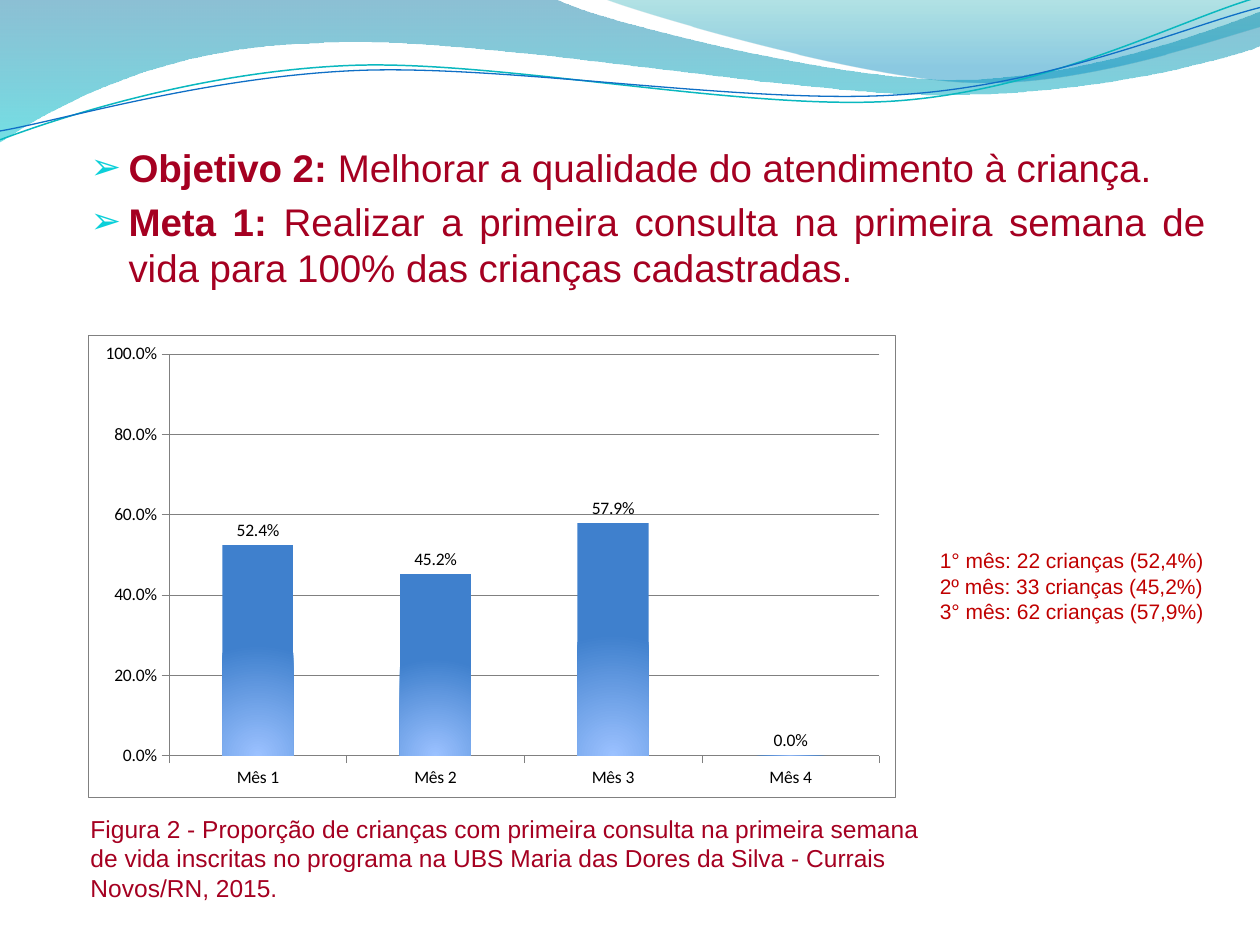
import math

from lxml import etree
from pptx import Presentation
from pptx.chart.data import CategoryChartData
from pptx.dml.color import RGBColor
from pptx.enum import chart as chart_enum, text as text_enum
from pptx.oxml import ns, parse_xml
from pptx.util import Inches, Pt

WINE = RGBColor(0xA5, 0x00, 0x21)
RED = RGBColor(0xC0, 0x00, 0x00)
TEAL = RGBColor(0x0A, 0xB8, 0xBF)
BLUE = RGBColor(0x0F, 0x6F, 0xC6)
GRAY = RGBColor(0x80, 0x80, 0x80)
BLACK = RGBColor(0, 0, 0)
BULLET_COLOR = "0BD0D9"

GOALS = [
    ("Objetivo 2: ", "Melhorar a qualidade do atendimento à criança."),
    ("Meta 1: ", "Realizar a primeira consulta na primeira semana de vida "
                 "para 100% das crianças cadastradas."),
]
CAPTION = ["Figura 2 - Proporção de crianças com primeira consulta na primeira semana "
           "de vida inscritas no programa na UBS Maria das Dores da Silva - "
           "Currais Novos/RN, 2015."]
COUNTS = ["1° mês: 22 crianças (52,4%)", "2º mês: 33 crianças (45,2%)",
          "3° mês: 62 crianças (57,9%) "]
MONTHS = ["Mês 1", "Mês 2", "Mês 3", "Mês 4"]
SHARES = [0.524, 0.452, 0.579, 0]

# Each path is a start point, then straight (1 point) or Bézier (3 points) steps, in inches.
# Gradient stops are position %, colour, opacity %.
WAVES = [
    ([[(0, 0)], [(4.4, -0.01)], [(4.76, 0.17), (6.64, 0.63), (7.58, 0.63)],
      [(8.53, 0.63), (9.58, 0.26), (10, 0.09)], [(10.01, 0.36)],
      [(9.83, 0.44), (8.7, 0.76), (7.46, 0.75)], [(6.22, 0.75), (3.82, 0.28), (2.57, 0.34)],
      [(1.29, 0.36), (0.46, 0.83), (-0.01, 1.13)], [(0, 0)]],
     [(0, "0074A1", 45), (100, "00C6CF", 55)]),
    ([[(4.79, -0.01)], [(5.09, 0.11), (6.82, 0.62), (7.69, 0.65)],
      [(8.56, 0.69), (9.61, 0.32), (10, 0.21)], [(10, 0)], [(4.79, -0.01)]],
     [(0, "00A1A9", 30), (80, "008BBF", 45)]),
]
RIBBONS = [
    ([[(0, 1.11)], [(0.48, 0.93), (1.58, 0.57), (2.77, 0.52)],
      [(3.95, 0.47), (5.93, 0.89), (7.13, 0.8)], [(8.33, 0.71), (9.38, 0.15), (9.98, -0.02)]],
     (4.99, 0.57), TEAL, 0.85),
    ([[(0, 1.04)], [(0.47, 0.96), (1.64, 0.61), (2.83, 0.56)],
      [(4.03, 0.51), (5.97, 0.84), (7.17, 0.75)], [(8.36, 0.67), (9.41, 0.21), (10, 0.06)]],
     (5, 0.59), BLUE, 0.75),
]
RIBBON_TILT = -2.7
LINEAR_DOWN = '<a:lin ang="5400000" scaled="0"/>'
RADIAL_BOTTOM = '<a:path path="circle"><a:fillToRect l="50000" t="100000" r="50000"/></a:path>'


def turn(path, center, degrees):
    cosine, sine = math.cos(math.radians(degrees)), math.sin(math.radians(degrees))
    return [[(center[0] + (x - center[0]) * cosine - (y - center[1]) * sine,
              center[1] + (x - center[0]) * sine + (y - center[1]) * cosine)
             for x, y in step] for step in path]


def add_curve(shapes, path, close):
    """Build a freeform through the end points, then bend its Bézier segments."""
    steps = [[(Inches(x), Inches(y)) for x, y in step] for step in path]
    builder = shapes.build_freeform(*steps[0][0])
    builder.add_line_segments([step[-1] for step in steps[1:]], close=close)
    shape = builder.convert_to_shape()
    shape.shadow.inherit = False
    segments = list(shape.element.iter(ns.qn("a:lnTo")))
    for segment, step in zip(segments, steps[1:]):
        if len(step) == 3:
            curve = etree.Element(ns.qn("a:cubicBezTo"))
            for x, y in step:
                etree.SubElement(curve, ns.qn("a:pt"),
                                 x=str(x - shape.left), y=str(y - shape.top))
            segment.getparent().replace(segment, curve)
    return shape


def set_gradient(fill, properties, stops, direction):
    fill.solid()
    stop_xml = "".join(
        f'<a:gs pos="{position * 1000}"><a:srgbClr val="{color}">'
        f'<a:alpha val="{opacity * 1000}"/></a:srgbClr></a:gs>'
        for position, color, opacity in stops)
    solid = properties.find(ns.qn("a:solidFill"))
    properties.replace(solid, parse_xml(
        f'<a:gradFill {ns.nsdecls("a")} rotWithShape="1"><a:gsLst>{stop_xml}</a:gsLst>'
        f'{direction}</a:gradFill>'))


def add_run(paragraph, text, size, color, bold=False):
    run = paragraph.add_run()
    run.text = text
    font = run.font
    font.name, font.size, font.bold = "Arial", Pt(size), bold
    font.color.rgb = color


def add_text(slide, box, lines, size, color, indent=None):
    frame = slide.shapes.add_textbox(*map(Inches, box)).text_frame
    frame.word_wrap = True
    frame.auto_size = text_enum.MSO_AUTO_SIZE.SHAPE_TO_FIT_TEXT
    for index, line in enumerate(lines):
        paragraph = frame.add_paragraph() if index else frame.paragraphs[0]
        if indent:
            paragraph.alignment = text_enum.PP_ALIGN.JUSTIFY
            paragraph._p.get_or_add_pPr().set("marL", str(Inches(indent)))
        add_run(paragraph, line, size, color)


def fill_goals(body):
    body.left, body.top, body.width, body.height = map(Inches, (0.62, 1.09, 9.05, 0.6))
    frame = body.text_frame
    frame.auto_size = text_enum.MSO_AUTO_SIZE.NONE
    frame.vertical_anchor = text_enum.MSO_ANCHOR.TOP
    for index, (label, sentence) in enumerate(GOALS):
        paragraph = frame.add_paragraph() if index else frame.paragraphs[0]
        paragraph.alignment = text_enum.PP_ALIGN.JUSTIFY
        properties = paragraph._p.get_or_add_pPr()
        properties.set("marL", str(Inches(0.3)))
        properties.set("indent", str(Inches(-0.3)))
        spacing = etree.SubElement(properties, ns.qn("a:spcBef"))
        etree.SubElement(spacing, ns.qn("a:spcPct"), val="20000")
        color = etree.SubElement(properties, ns.qn("a:buClr"))
        etree.SubElement(color, ns.qn("a:srgbClr"), val=BULLET_COLOR)
        etree.SubElement(properties, ns.qn("a:buSzPct"), val="95000")
        etree.SubElement(properties, ns.qn("a:buChar"), char="➢")
        add_run(paragraph, label, 22, WINE, bold=True)
        add_run(paragraph, sentence, 22, WINE)


def set_hairline(line):
    line.color.rgb = GRAY
    line.width = Pt(0.25)


def add_share_chart(slide):
    data = CategoryChartData(number_format="0.0%")
    data.categories = MONTHS
    data.add_series("Series 1", SHARES)
    chart = slide.shapes.add_chart(chart_enum.XL_CHART_TYPE.COLUMN_CLUSTERED,
                                   *map(Inches, (0.7, 2.66, 6.41, 3.67)), data).chart
    chart.has_legend = chart.has_title = False
    chart.font.name, chart.font.size = "Calibri", Pt(10)
    chart.font.color.rgb = BLACK

    value_axis = chart.value_axis
    value_axis.minimum_scale, value_axis.maximum_scale, value_axis.major_unit = 0, 1, 0.2
    value_axis.tick_labels.number_format = "0.0%"
    value_axis.tick_labels.number_format_is_linked = False
    set_hairline(value_axis.major_gridlines.format.line)
    for axis in (chart.category_axis, value_axis):
        axis.major_tick_mark = chart_enum.XL_TICK_MARK.OUTSIDE
        set_hairline(axis.format.line)

    plot = chart.plots[0]
    plot.gap_width, plot.vary_by_categories = 150, False
    series = plot.series[0]
    series.invert_if_negative = False
    fill = series.format.fill
    set_gradient(fill, chart.element.find(".//" + ns.qn("c:ser")).find(ns.qn("c:spPr")),
                 [(0, "9BC1FF", 100), (100, "3F80CD", 100)], RADIAL_BOTTOM)
    labels = series.data_labels
    labels.show_value = True
    labels.number_format, labels.number_format_is_linked = "0.0%", False
    labels.position = chart_enum.XL_LABEL_POSITION.OUTSIDE_END

    white = '<a:solidFill><a:srgbClr val="FFFFFF"/></a:solidFill>'
    border = f'<a:ln w="{Pt(0.25)}"><a:solidFill><a:srgbClr val="{GRAY}"/></a:solidFill></a:ln>'
    frame_xml = f'<c:spPr {ns.nsdecls("c", "a")}>{white}%s</c:spPr>'
    chart.element.find(ns.qn("c:chart")).addnext(parse_xml(frame_xml % border))
    plot_area = chart.element.find(".//" + ns.qn("c:plotArea"))
    plot_area.append(parse_xml(frame_xml % ""))
    for old_layout in plot_area.findall(ns.qn("c:layout")):
        plot_area.remove(old_layout)
    layout = etree.Element(ns.qn("c:layout"))
    manual = etree.SubElement(layout, ns.qn("c:manualLayout"))
    for tag, value in [("layoutTarget", "inner"), ("xMode", "edge"), ("yMode", "edge"),
                       ("x", "0.1"), ("y", "0.04"), ("w", "0.88"), ("h", "0.87")]:
        etree.SubElement(manual, ns.qn("c:" + tag), val=value)
    plot_area.insert(0, layout)


def main():
    presentation = Presentation()
    presentation.slide_width, presentation.slide_height = Inches(10), Inches(7.5)
    slide = presentation.slides.add_slide(presentation.slide_layouts[1])
    title = slide.shapes.title.element
    title.getparent().remove(title)
    body = slide.placeholders[1]

    for path, stops in WAVES:
        wave = add_curve(slide.shapes, path, close=True)
        set_gradient(wave.fill, wave.element.spPr, stops, LINEAR_DOWN)
        wave.line.fill.background()
    ribbons = slide.shapes.add_group_shape()
    for path, center, color, width in RIBBONS:
        ribbon = add_curve(ribbons.shapes, turn(path, center, -RIBBON_TILT), close=False)
        ribbon.rotation = RIBBON_TILT
        ribbon.fill.background()
        ribbon.line.color.rgb, ribbon.line.width = color, Pt(width)

    slide.shapes.element.append(body.element)  # bring the text in front of the waves
    fill_goals(body)
    add_text(slide, (0.62, 6.41, 6.84, 0.81), CAPTION, 14, WINE)
    add_text(slide, (7.27, 4.3, 2.58, 0.71), COUNTS, 12, RED, indent=0.09)
    add_share_chart(slide)
    presentation.save("out.pptx")


if __name__ == "__main__":
    main()
